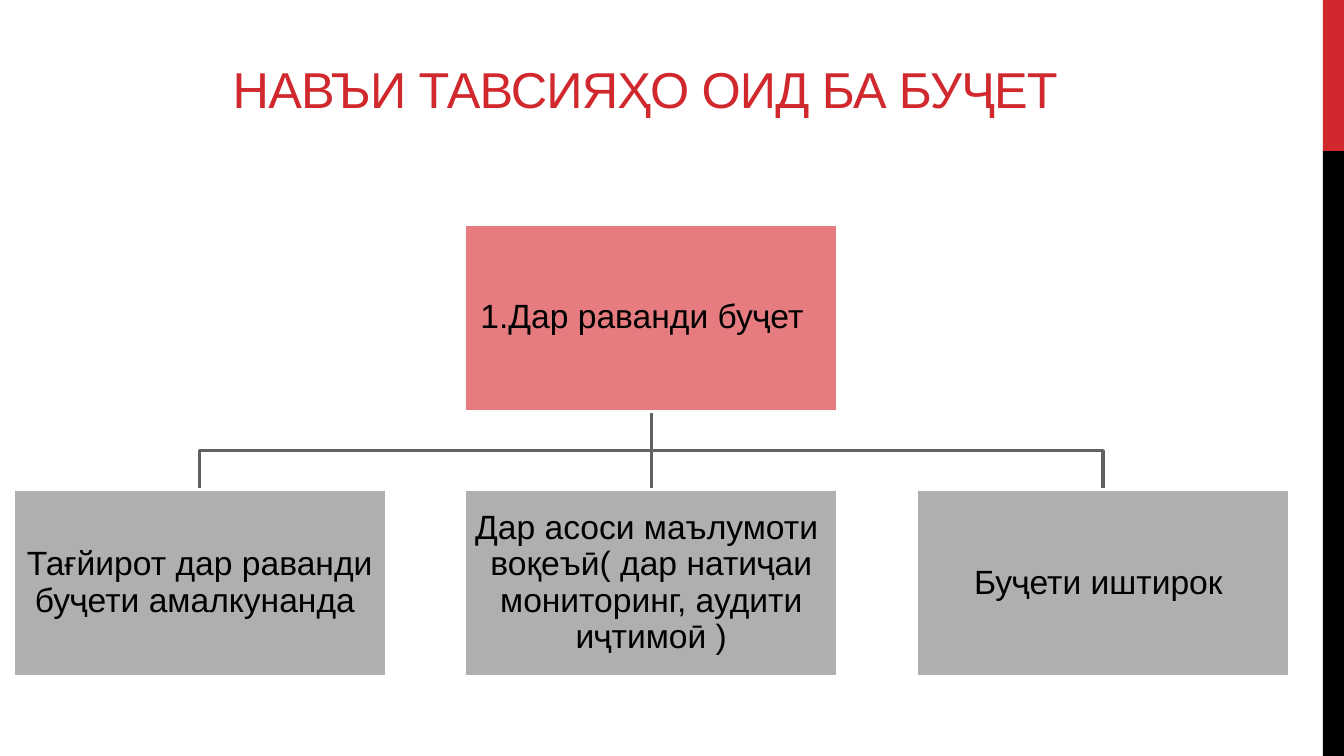
from pptx import Presentation
from pptx.dml.color import RGBColor
from pptx.enum.shapes import MSO_CONNECTOR, MSO_SHAPE
from pptx.enum.text import MSO_ANCHOR, PP_ALIGN
from pptx.oxml.ns import qn
from pptx.util import Inches, Pt
from lxml.etree import SubElement

COLORS = {
    "red": "D1282E",
    "black": "000000",
    "white": "FFFFFF",
    "rose": "E67C7F",
    "gray": "AFAFAF",
    "line": "626262",
}
FONT = "Arial"
NODE_WIDTH, NODE_HEIGHT = 3.7, 1.85
TOPIC = "Дар раванди буҷет  "
BRANCHES = [
    "Тағйирот дар раванди буҷети амалкунанда ",
    "Дар асоси маълумоти  воқеъӣ( дар натиҷаи мониторинг, аудити иҷтимоӣ )",
    "Буҷети иштирок ",
]


def color(name):
    return RGBColor.from_string(COLORS[name])


def add_rectangle(page, left, top, width, height, fill):
    box = page.shapes.add_shape(MSO_SHAPE.RECTANGLE, Inches(left), Inches(top),
                                Inches(width), Inches(height))
    box.shadow.inherit = False
    box.fill.solid()
    box.fill.fore_color.rgb = color(fill)
    box.line.fill.background()
    return box


def write_text(box, text, size, ink, anchor, margins):
    frame = box.text_frame
    frame.word_wrap = True
    frame.vertical_anchor = anchor
    frame.margin_left = frame.margin_right = Inches(margins[0])
    frame.margin_top = frame.margin_bottom = Inches(margins[1])
    para = frame.paragraphs[0]
    para.alignment = PP_ALIGN.CENTER
    span = para.add_run()
    span.text = text
    span.font.name = FONT
    span.font.size = Pt(size)
    span.font.color.rgb = color(ink)
    return para, span


def style_line(line):
    line.color.rgb = color("line")
    line.width = Pt(2.25)


def add_side_bar(page, left, top, width, height):
    red_height = height / 5
    add_rectangle(page, left, top, width, red_height, "red")
    add_rectangle(page, left, top + red_height, width, height - red_height, "black")


def add_title(page, left, top, width, height):
    box = page.shapes.add_textbox(Inches(left), Inches(top), Inches(width), Inches(height))
    _, span = write_text(box, "НАВЪИ ТАВСИЯҲО ОИД БА БУҶЕТ ", 36, "red",
                         MSO_ANCHOR.BOTTOM, (0.1, 0.05))
    # Slightly tightened letters
    span.font._element.set("spc", "-60")


def add_branch_line(page, start_x, start_y, end_x, end_y):
    x1, y1, x2, y2 = (Inches(value) for value in (start_x, start_y, end_x, end_y))
    if x1 == x2:
        link = page.shapes.add_connector(MSO_CONNECTOR.STRAIGHT, x1, y1, x2, y2)
        SubElement(link._element.spPr, qn("a:effectLst"))
    else:
        middle = (y1 + y2) // 2
        builder = page.shapes.build_freeform(x1, y1)
        builder.add_line_segments([(x1, middle), (x2, middle), (x2, y2)], close=False)
        link = builder.convert_to_shape()
        link.shadow.inherit = False
        link.fill.background()
    style_line(link.line)


def add_node(page, left, top, text, fill, numbered=False):
    box = add_rectangle(page, left, top, NODE_WIDTH, NODE_HEIGHT, fill)
    box.line.color.rgb = color("white")
    box.line.width = Pt(2.25)
    para, _ = write_text(box, text, 24, "black", MSO_ANCHOR.MIDDLE, (0.02, 0.02))
    para.line_spacing = 0.9
    if numbered:
        properties = para._p.get_or_add_pPr()
        properties.set("marL", "0")
        properties.set("indent", "0")
        SubElement(properties, qn("a:buFont"), typeface=FONT)
        SubElement(properties, qn("a:buAutoNum"), type="arabicPeriod")


def add_hierarchy(page, left, top, width, height):
    step = (width - NODE_WIDTH) / (len(BRANCHES) - 1)
    branch_lefts = [round(left + step * index, 2) for index in range(len(BRANCHES))]
    topic_left = round(left + (width - NODE_WIDTH) / 2, 2)
    branch_top = top + height - NODE_HEIGHT
    # Lines lie behind the boxes
    for branch_left in branch_lefts:
        add_branch_line(page, topic_left + NODE_WIDTH / 2, top + NODE_HEIGHT,
                        branch_left + NODE_WIDTH / 2, branch_top)
    # Topic box and its branches
    add_node(page, topic_left, top, TOPIC, "rose", numbered=True)
    for branch_left, text in zip(branch_lefts, BRANCHES):
        add_node(page, branch_left, branch_top, text, "gray")


def main():
    deck = Presentation()
    deck.slide_width, deck.slide_height = Inches(13.33), Inches(7.5)
    page = deck.slides.add_slide(deck.slide_layouts[6])
    page.background.fill.solid()
    page.background.fill.fore_color.rgb = color("white")
    add_side_bar(page, 13.12, 0, 0.21, 7.5)
    add_title(page, 0.58, 0.34, 11.77, 0.89)
    add_hierarchy(page, 0.13, 2.23, 12.66, 4.48)
    deck.save("out.pptx")


if __name__ == "__main__":
    main()
